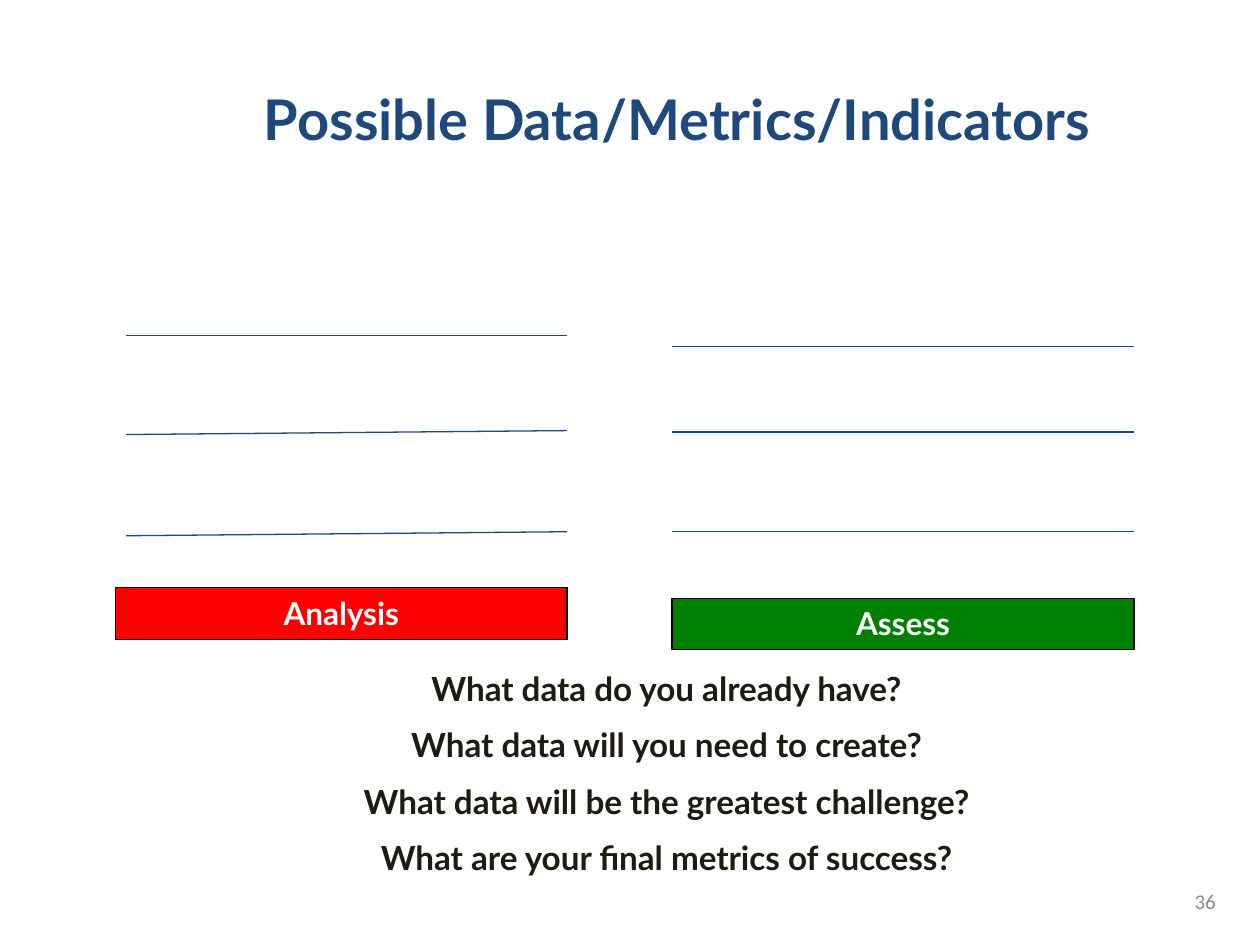
import pptx
import pptx.util
import pptx.dml.color
import pptx.enum.shapes
import pptx.enum.text
import lxml.etree

Cm = pptx.util.Cm
Pt = pptx.util.Pt
RGB = pptx.dml.color.RGBColor
ALIGN = pptx.enum.text.PP_ALIGN
ANCHOR = pptx.enum.text.MSO_ANCHOR

NAVY = RGB(0x1F, 0x49, 0x7D)
DARK = RGB(0x1E, 0x1C, 0x11)
GRAY = RGB(0x8C, 0x8C, 0x8C)
GREEN = RGB(0x00, 0x80, 0x00)
RED = RGB(0xFF, 0x00, 0x00)
BLACK = RGB(0x00, 0x00, 0x00)
WHITE = RGB(0xFF, 0xFF, 0xFF)

QUESTIONS = [
    "What data do you already have?",
    "What data will you need to create?",
    "What data will be the greatest challenge?",
    "What are your final metrics of success?",
]


def write(shape, lines, size, color, font="Lato", bold=True,
          align=ALIGN.CENTER, anchor=ANCHOR.TOP, gap=0, lead=None):
    """Fill a shape with one paragraph per line, gap points apart."""
    frame = shape.text_frame
    frame.word_wrap = True
    frame.vertical_anchor = anchor
    for i, line in enumerate(lines):
        para = frame.add_paragraph() if i else frame.paragraphs[0]
        para.alignment = align
        if i and gap:
            para.space_before = Pt(gap)
        if lead:
            para.line_spacing = lead
        run = para.add_run()
        run.text = line
        run.font.name = font
        run.font.size = Pt(size)
        run.font.bold = bold
        run.font.color.rgb = color


def add_text(slide, box, lines, size, color, **style):
    shape = slide.shapes.add_textbox(*map(Cm, box))
    write(shape, lines, size, color, **style)


def add_rule(slide, x1, y1, x2, y2):
    rule = slide.shapes.add_connector(
        pptx.enum.shapes.MSO_CONNECTOR.STRAIGHT, Cm(x1), Cm(y1), Cm(x2), Cm(y2))
    rule.line.color.rgb = NAVY
    rule.line.width = Pt(0.75)
    props = rule._element.spPr
    lxml.etree.SubElement(props, pptx.oxml.ns.qn("a:effectLst"))


def add_column(slide, box, label, fill, rules, inset=0):
    """Draw writing rules, given as start and end drops, above a label bar."""
    left, top, width, height = box
    for start, end in rules:
        add_rule(slide, left + inset, top + start, left + width, top + end)
    tall = 1.04
    bar = slide.shapes.add_shape(
        pptx.enum.shapes.MSO_SHAPE.RECTANGLE,
        Cm(left), Cm(top + height - tall), Cm(width), Cm(tall))
    bar.shadow.inherit = False
    bar.fill.solid()
    bar.fill.fore_color.rgb = fill
    bar.line.color.rgb = BLACK
    bar.line.width = Pt(0.75)
    write(bar, [label], 18, WHITE)


def main():
    deck = pptx.Presentation()
    deck.slide_width, deck.slide_height = Cm(25.4), Cm(19.05)
    slide = deck.slides.add_slide(deck.slide_layouts[6])

    add_text(slide, (2.33, 0, 22.65, 3.18), ["Possible Data/Metrics/Indicators"],
             32, NAVY, anchor=ANCHOR.BOTTOM, lead=0.8)
    add_column(slide, (2.33, 6.77, 9.1, 6.12), "Analysis", RED,
               [(0, 0), (1.99, 1.91), (4.03, 3.95)], inset=0.21)
    add_column(slide, (13.55, 6.98, 9.31, 6.12), "Assess", GREEN,
               [(0, 0), (1.73, 1.73), (3.73, 3.73)])
    add_text(slide, (5.92, 13.34, 15.04, 4.72), QUESTIONS, 19, DARK, gap=9.5)
    add_text(slide, (18.84, 17.66, 5.92, 1.01), ["36"], 12, GRAY,
             font="Calibri", bold=False, align=ALIGN.RIGHT, anchor=ANCHOR.MIDDLE)

    deck.save("out.pptx")


if __name__ == "__main__":
    main()
